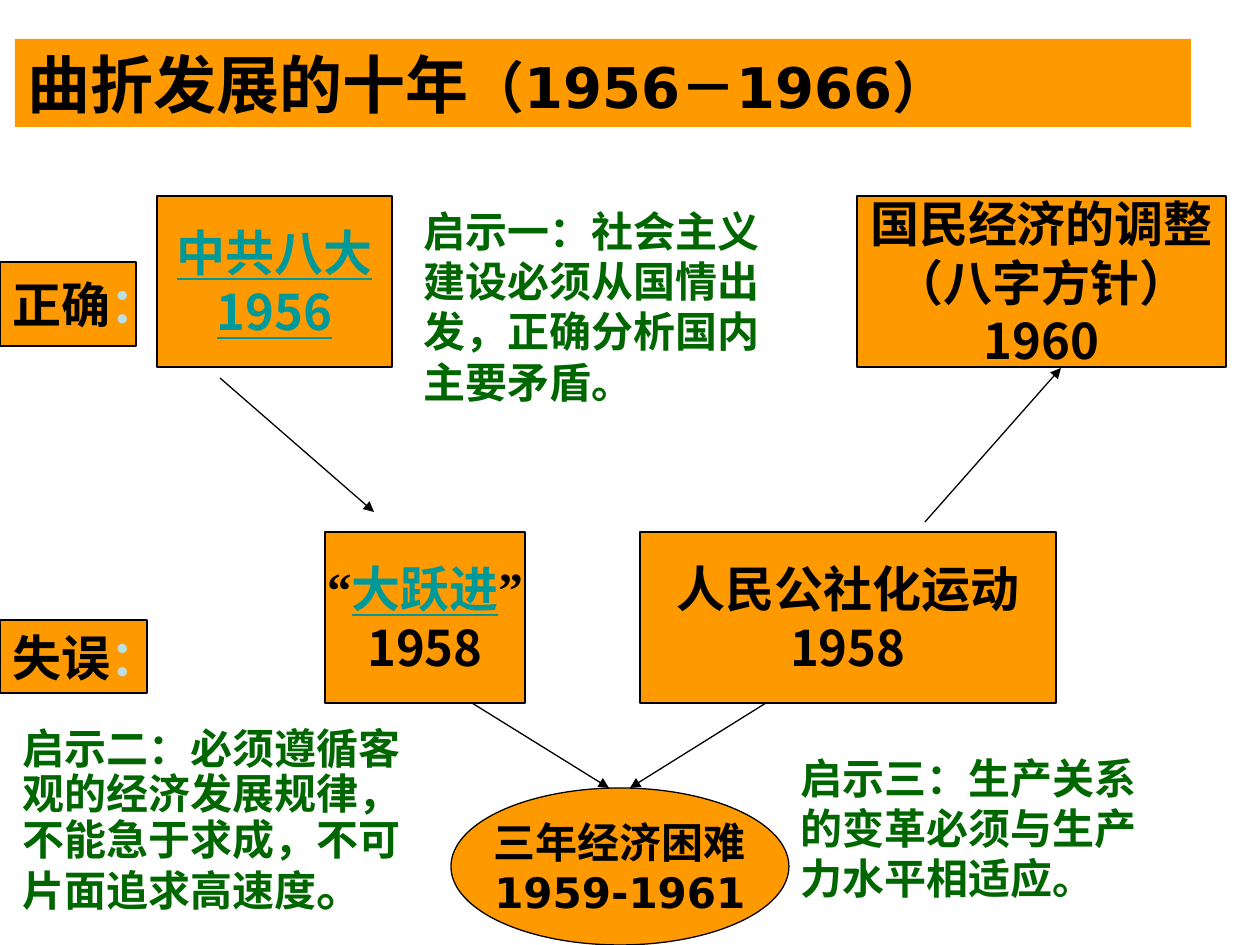
from dataclasses import dataclass

from lxml import etree
from pptx import Presentation
from pptx.dml.color import RGBColor
from pptx.enum import shapes, text
from pptx.oxml.ns import qn
from pptx.util import Pt

PX = 914400 // 126  # EMU per px


@dataclass(frozen=True)
class Theme:
    orange: str = "FF9900"
    black: str = "000000"
    green: str = "006600"
    teal: str = "009999"
    pale: str = "BBE0E3"
    sans: str = "DejaVu Sans"
    cjk: str = "Noto Sans CJK SC"
    serif: str = "Times New Roman"
    title: int = 36
    years: int = 32
    box: int = 28
    note: int = 24
    line: float = 0.75


T = Theme()


def px(*lengths):
    return [round(n * PX) for n in lengths]


def style(font, size=None, name=None, color=None, underline=None):
    """Set the given font properties; the typeface also covers Chinese."""
    if size:
        font.size = Pt(size)
    if color:
        font.color.rgb = RGBColor.from_string(color)
    if underline:
        font.underline = True
    if name:
        font.name = name
        latin = font._element.find(qn("a:latin"))
        ea = etree.Element(qn("a:ea"), typeface=name)
        latin.addnext(ea)


def write(tf, paragraphs, size, name, color=T.black, align=text.PP_ALIGN.LEFT,
          spacing=None):
    """Each paragraph is a string or a list of (string, run style) pairs."""
    for i, runs in enumerate(paragraphs):
        p = tf.add_paragraph() if i else tf.paragraphs[0]
        p.alignment = align
        p.line_spacing = spacing
        p.font.bold = True
        style(p.font, size, name, color)
        for words, own in [(runs, {})] if isinstance(runs, str) else runs:
            r = p.add_run()
            r.text = words
            style(r.font, **own)


def fill(sp, color):
    sp.fill.solid()
    sp.fill.fore_color.rgb = RGBColor.from_string(color)


def outline(sp):
    sp.line.color.rgb = RGBColor.from_string(T.black)
    sp.line.width = Pt(T.line)


def add_title(s, at, runs):
    sp = s.shapes.title
    sp.left, sp.top, sp.width, sp.height = px(*at)
    fill(sp, T.orange)
    tf = sp.text_frame
    tf.auto_size = text.MSO_AUTO_SIZE.NONE
    tf.vertical_anchor = text.MSO_ANCHOR.BOTTOM
    write(tf, [runs], T.title, T.sans)


def add_box(s, at, paragraphs, size=T.box, name=T.cjk,
            kind=shapes.MSO_SHAPE.RECTANGLE, align=text.PP_ALIGN.CENTER):
    sp = s.shapes.add_shape(kind, *px(*at))
    sp.shadow.inherit = False
    fill(sp, T.orange)
    outline(sp)
    tf = sp.text_frame
    tf.word_wrap = False
    tf.vertical_anchor = text.MSO_ANCHOR.MIDDLE
    write(tf, paragraphs, size, name, align=align)


def add_label(s, at, word):
    add_box(s, at, [[(word, {}), ("：", {"color": T.pale})]], name=T.sans,
            align=text.PP_ALIGN.LEFT)


def add_note(s, at, runs, spacing=None):
    tf = s.shapes.add_textbox(*px(*at)).text_frame
    tf.word_wrap = True
    write(tf, [runs], T.note, T.sans, T.green, spacing=spacing)


def add_arrow(s, *ends):
    line = s.shapes.add_connector(shapes.MSO_CONNECTOR.STRAIGHT, *px(*ends))
    outline(line)
    etree.SubElement(line.line._get_or_add_ln(), qn("a:tailEnd"), type="triangle")
    etree.SubElement(line._element.spPr, qn("a:effectLst"))


def main():
    prs = Presentation()
    prs.slide_width, prs.slide_height = px(1260, 945)
    s = prs.slides.add_slide(prs.slide_layouts[5])
    link = {"color": T.teal, "underline": True}
    quote = {"name": T.serif}

    # Title band
    add_title(s, (15, 39, 1176, 88),
              [("曲折发展的十年", {}), ("（1956－1966）", {"size": T.years})])

    # Row labels
    add_label(s, (0, 262, 136, 84), "正确")
    add_label(s, (0, 620, 147, 73), "失误")

    # Events: upper row correct, lower row mistaken
    upper, lower, height = 196, 532, 171
    add_box(s, (157, upper, 235, height), [[("中共八大", link)], [("1956", link)]])
    add_box(s, (857, upper, 369, height), ["国民经济的调整", "（八字方针）", "1960"])
    add_box(s, (325, lower, 200, height),
            [[("“", quote), ("大跃进", link), ("”", quote)], "1958"])
    add_box(s, (640, lower, 416, height), ["人民公社化运动", "1958"])

    # Outcome
    add_box(s, (451, 788, 338, 157), ["三年经济困难", "1959-1961"], T.note, T.sans,
            shapes.MSO_SHAPE.OVAL)

    # Arrows
    add_arrow(s, 220, 378, 374, 512)
    add_arrow(s, 925, 522, 1061, 368)
    add_arrow(s, 472, 703, 609, 788)
    add_arrow(s, 766, 703, 630, 788)

    # Lessons
    add_note(s, (411, 199, 368, 214),
             "启示一：社会主义建设必须从国情出发，正确分析国内主要矛盾。")
    add_note(s, (10, 722, 433, 204),
             [("启示二：必须遵循客观的经济发展规律，不能急于求成，不可片面追求高速度", {}),
              ("。", {"size": T.box})], spacing=0.9)
    add_note(s, (788, 746, 388, 164),
             "启示三：生产关系的变革必须与生产力水平相适应。")

    prs.save("out.pptx")


if __name__ == "__main__":
    main()
